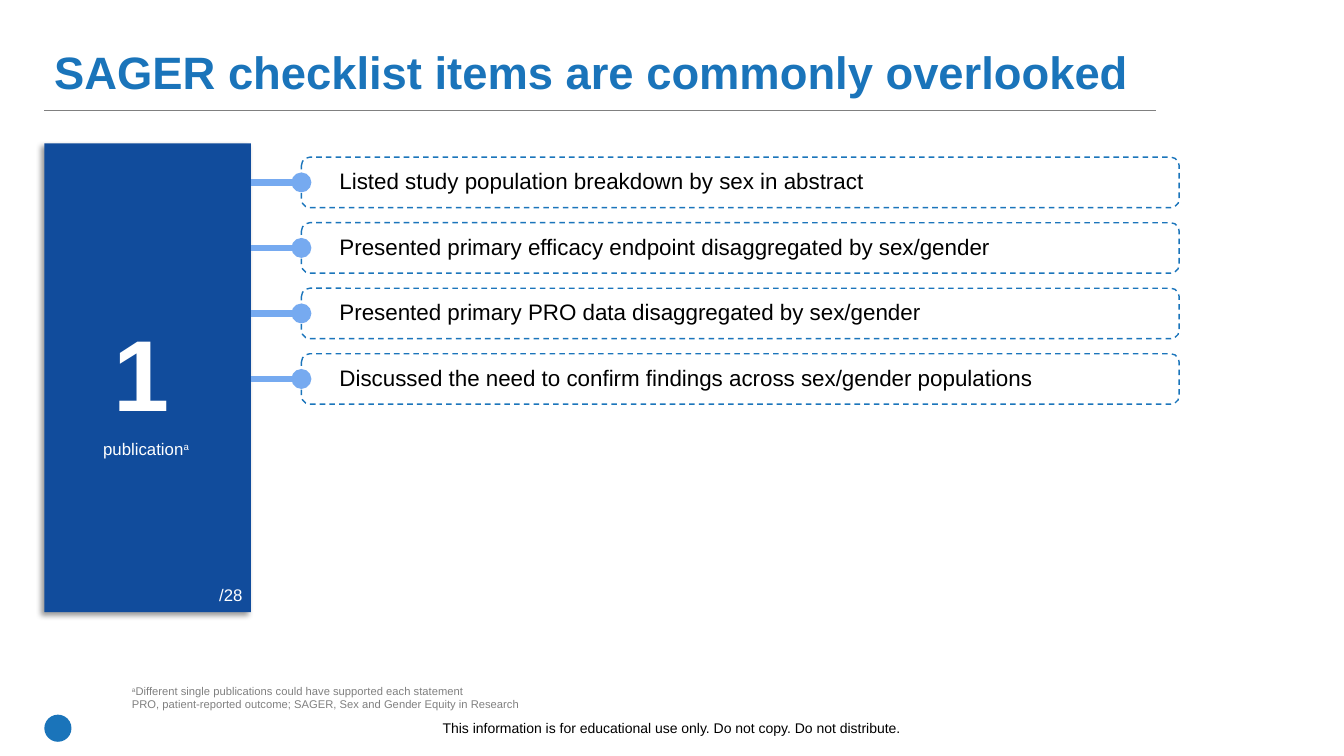
from dataclasses import dataclass

import pptx
import pptx.dml.color
import pptx.enum.dml
import pptx.enum.shapes
import pptx.enum.text
import pptx.oxml.ns
import pptx.util
from lxml import etree

COLORS = {
    "title": "1A74BA", "rule": "808080", "panel": "114C9C", "frame": "1B75BB",
    "link": "76AAF0", "note": "808080", "black": "000000", "white": "FFFFFF",
}
Pt = pptx.util.Pt
Shapes = pptx.enum.shapes.MSO_SHAPE
Align = pptx.enum.text.PP_ALIGN
Anchor = pptx.enum.text.MSO_ANCHOR


@dataclass
class Box:
    left: float
    top: float
    width: float
    height: float

    def lengths(self) -> list:
        return [Pt(v) for v in (self.left, self.top, self.width, self.height)]


@dataclass
class Span:
    text: str
    raised: bool = False


@dataclass
class Item:
    text: str
    top: float


def rgb(name: str):
    return pptx.dml.color.RGBColor.from_string(COLORS[name])


def add_element(parent, tag: str, **attributes: str):
    return etree.SubElement(parent, pptx.oxml.ns.qn(tag), attributes)


def add_text(page, box: Box, paragraphs: list, *, size: float, color: str = "black",
             bold: bool = False, align=Align.LEFT, anchor=Anchor.TOP,
             line_spacing: float = 1.0) -> None:
    frame = page.shapes.add_textbox(*box.lengths()).text_frame
    frame.word_wrap = True
    frame.vertical_anchor = anchor
    for index, spans in enumerate(paragraphs):
        para = frame.paragraphs[0] if index == 0 else frame.add_paragraph()
        para.alignment = align
        para.line_spacing = line_spacing
        for part in spans:
            span = para.add_run()
            span.text = part.text
            span.font.name = "Arial"
            span.font.size = Pt(size)
            span.font.bold = bold
            span.font.color.rgb = rgb(color)
            if part.raised:
                span._r.get_or_add_rPr().set("baseline", "30000")


def add_shape(page, kind, box: Box, *, fill: str = "", line: str = ""):
    shape = page.shapes.add_shape(kind, *box.lengths())
    shape.shadow.inherit = False
    if fill:
        shape.fill.solid()
        shape.fill.fore_color.rgb = rgb(fill)
    else:
        shape.fill.background()
    if line:
        shape.line.color.rgb = rgb(line)
        shape.line.width = Pt(1)
        shape.line.dash_style = pptx.enum.dml.MSO_LINE.DASH
    else:
        shape.line.fill.background()
    return shape


def add_line(page, left: float, right: float, y: float, color: str, width: float,
             dot: bool = False) -> None:
    line = page.shapes.add_connector(pptx.enum.shapes.MSO_CONNECTOR.STRAIGHT,
                                     Pt(left), Pt(y), Pt(right), Pt(y))
    line.line.color.rgb = rgb(color)
    line.line.width = Pt(width)
    if dot:
        add_element(line.line._get_or_add_ln(), "a:tailEnd", type="oval")
    add_element(line._element.spPr, "a:effectLst")


def add_panel(page, box: Box) -> None:
    panel = add_shape(page, Shapes.RECTANGLE, box, fill="panel")
    effects = panel._element.spPr.find(pptx.oxml.ns.qn("a:effectLst"))
    shadow = add_element(effects, "a:outerShdw", blurRad=str(Pt(4)), dist=str(Pt(3)),
                         dir=str(135 * 60000), algn="tr", rotWithShape="0")
    tint = add_element(shadow, "a:srgbClr", val=COLORS["black"])
    add_element(tint, "a:alpha", val="40000")


def add_item(page, item: Item) -> None:
    add_shape(page, Shapes.ROUNDED_RECTANGLE, Box(215.3, item.top, 627, 36), line="frame")
    add_line(page, 179.3, 215.3, item.top + 18, "link", 4.75, dot=True)
    add_text(page, Box(235.4, item.top + 3.6, 574.6, 26.6), [[Span(item.text)]], size=16)


def main() -> None:
    deck = pptx.Presentation()
    deck.slide_width, deck.slide_height = Pt(960), Pt(540)
    page = deck.slides.add_slide(deck.slide_layouts[6])

    # Title and footer
    add_shape(page, Shapes.OVAL, Box(31.7, 510.5, 19.4, 19.4), fill="title")
    add_line(page, 31.7, 825.8, 78.5, "rule", 0.5)
    add_text(page, Box(31.7, 15.1, 796.3, 77),
             [[Span("SAGER checklist items are commonly overlooked")]], size=32.4,
             color="title", bold=True, anchor=Anchor.MIDDLE, line_spacing=0.9)
    add_text(page, Box(27.4, 510.5, 904.3, 28.8), [[Span(
        "This information is for educational use only. Do not copy. Do not distribute.")]],
        size=10, align=Align.CENTER)

    # Count panel
    add_panel(page, Box(31.7, 102.4, 147.6, 334.8))
    add_text(page, Box(46.1, 218.2, 110.2, 94.3), [[Span("1")]], size=72,
             color="white", bold=True, align=Align.CENTER)
    add_text(page, Box(62.6, 309.6, 83.5, 21.6),
             [[Span("publication"), Span("a", raised=True)]], size=12,
             color="white", align=Align.CENTER)
    add_text(page, Box(144, 414, 41.8, 21.6), [[Span("/28")]], size=12,
             color="white", align=Align.CENTER)

    # Checklist items
    statements = [
        "Listed study population breakdown by sex in abstract",
        "Presented primary efficacy endpoint disaggregated by sex/gender",
        "Presented primary PRO data disaggregated by sex/gender",
        "Discussed the need to confirm findings across sex/gender populations",
    ]
    for index, statement in enumerate(statements):
        add_item(page, Item(statement, 112.3 + 46.8 * index))

    # Footnotes
    add_text(page, Box(87.1, 485.3, 791.3, 26.6), [
        [Span("a", raised=True),
         Span("Different single publications could have supported each statement")],
        [Span("PRO, patient-reported outcome; SAGER, Sex and Gender Equity in Research")],
    ], size=8, color="note")

    deck.save("out.pptx")


if __name__ == "__main__":
    main()
